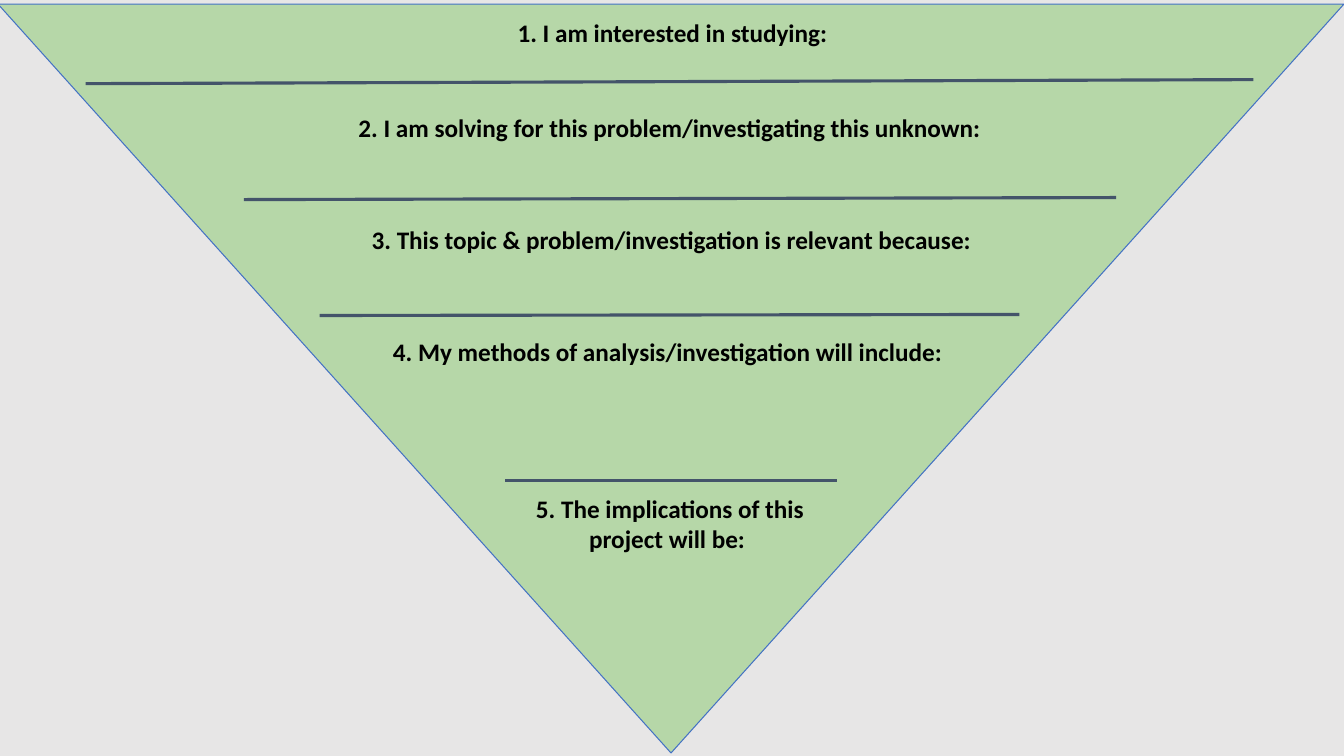
from pptx import Presentation
from pptx.dml.color import RGBColor
from pptx.enum.shapes import MSO_CONNECTOR, MSO_SHAPE
from pptx.enum.text import PP_ALIGN
from pptx.oxml.ns import qn
from pptx.util import Inches, Pt

GRAY = RGBColor(0xE7, 0xE6, 0xE6)
GREEN = RGBColor(0xB6, 0xD7, 0xA8)
BLUE = RGBColor(0x44, 0x72, 0xC4)
SLATE = RGBColor(0x44, 0x54, 0x6A)
BLACK = RGBColor(0, 0, 0)

# Prompts: text, (left, top, width, height)
PROMPTS = [
    ("1. I am interested in studying:", (0.31, 0.12, 12.72, 0.71)),
    ("2. I am solving for this problem/investigating this unknown: ",
     (1.25, 1.07, 10.84, 0.4)),
    ("3. This topic & problem/investigation is relevant because:",
     (2.66, 2.18, 8, 0.4)),
    ("4. My methods of analysis/investigation will include: ",
     (3.76, 3.29, 5.78, 0.4)),
    ("5. The implications of this project will be: ",
     (4.83, 4.84, 3.63, 1.31)),
]
# Writing lines: x1, y1, x2, y2
RULES = [
    (0.85, 0.83, 12.43, 0.79),
    (2.42, 1.98, 11.07, 1.96),
    (3.17, 3.13, 10.11, 3.12),
    (5.01, 4.77, 8.3, 4.77),
]


def add_funnel(s):
    sp = s.shapes.add_shape(MSO_SHAPE.ISOSCELES_TRIANGLE, Inches(-0.02),
                            Inches(0.04), Inches(13.35), Inches(7.43))
    sp.rotation = 180
    sp.shadow.inherit = False
    sp.fill.solid()
    sp.fill.fore_color.rgb = GREEN
    sp.line.color.rgb = BLUE
    sp.line.width = Pt(0.75)


def add_rule(s, ends):
    line = s.shapes.add_connector(MSO_CONNECTOR.STRAIGHT, *map(Inches, ends))
    line.line.color.rgb = SLATE
    line.line.width = Pt(2.25)
    sp_pr = line._element.spPr
    sp_pr.append(sp_pr.makeelement(qn("a:effectLst"), {}))


def add_prompt(s, text, box):
    tf = s.shapes.add_textbox(*map(Inches, box)).text_frame
    tf.word_wrap = True
    p = tf.paragraphs[0]
    p.text = text
    p.alignment = PP_ALIGN.CENTER
    font = p.runs[0].font
    font.name = "Calibri"
    font.size = Pt(18)
    font.bold = True
    font.color.rgb = BLACK


def main():
    prs = Presentation()
    prs.slide_width, prs.slide_height = Inches(13.33), Inches(7.5)
    s = prs.slides.add_slide(prs.slide_layouts[6])
    s.background.fill.solid()
    s.background.fill.fore_color.rgb = GRAY

    add_funnel(s)
    for ends in RULES:
        add_rule(s, ends)
    for text, box in PROMPTS:
        add_prompt(s, text, box)
    prs.save("out.pptx")


if __name__ == "__main__":
    main()
